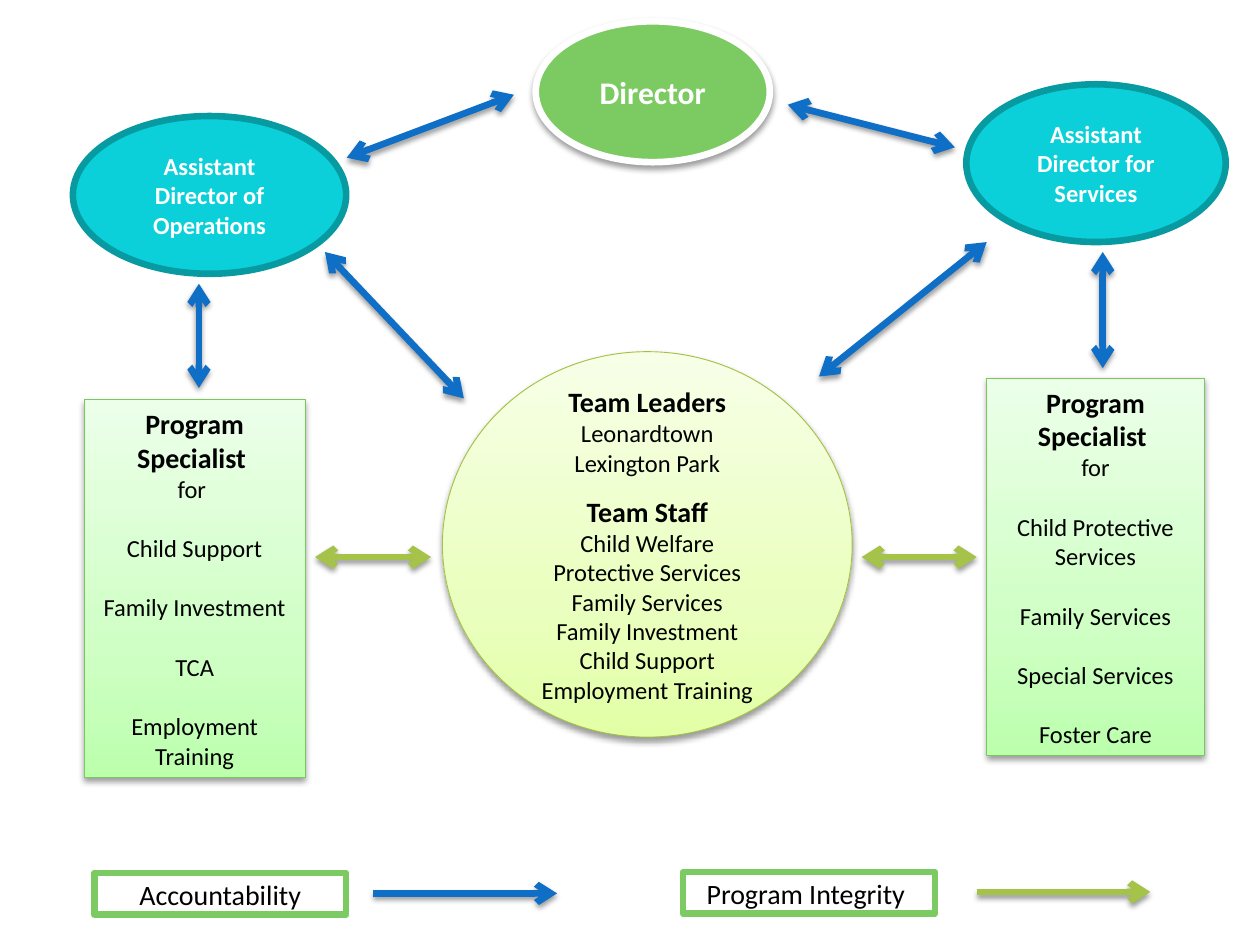
"""Build a one-slide organisation chart with accountability and integrity arrows."""
from dataclasses import dataclass

from lxml.etree import SubElement
from pptx import Presentation
from pptx.dml.color import RGBColor
from pptx.enum.shapes import MSO_CONNECTOR, MSO_SHAPE
from pptx.enum.text import MSO_ANCHOR, PP_ALIGN
from pptx.oxml.ns import qn
from pptx.shapes.base import BaseShape
from pptx.shapes.shapetree import SlideShapes
from pptx.util import Cm, Pt

BLUE, OLIVE, GREEN, CYAN, WHITE, BLACK = "0F6FC6", "A5C249", "7CCA62", "0BD0D9", "FFFFFF", "000000"
LIME_FADE = ("E2FFA5", "EAFFBF", "F7FFE7")
MINT_FADE = ("BCFFAD", "CFFFC5", "ECFFE9")
FADE_STOPS = (0, 35, 100)
GAP = 17.1
FRAME_FORMAT = {"word_wrap": True, "vertical_anchor": MSO_ANCHOR.MIDDLE}


@dataclass(frozen=True)
class Line:
    text: str
    size: float = 14
    bold: bool = False
    before: float = 0


@dataclass(frozen=True)
class Node:
    box: tuple[float, float, float, float]
    fill: str | tuple[str, ...]
    border: str
    border_width: float
    lines: tuple[Line, ...]
    outline: MSO_SHAPE = MSO_SHAPE.OVAL
    ink: str = BLACK
    shadow: bool = False


@dataclass(frozen=True)
class Arrow:
    ends: tuple[float, float, float, float]
    color: str
    two_way: bool = True


def rgb(code: str) -> RGBColor:
    return RGBColor.from_string(code)


def add_shadow(shape: BaseShape, blur: float) -> None:
    properties = shape.element.spPr
    effects = properties.find(qn("a:effectLst"))
    if effects is None:
        effects = SubElement(properties, qn("a:effectLst"))
    outer = SubElement(effects, qn("a:outerShdw"), blurRad=str(Pt(blur)), dist=str(Pt(2)),
                       dir="5400000", rotWithShape="0")
    ink = SubElement(outer, qn("a:srgbClr"), val=BLACK)
    SubElement(ink, qn("a:alpha"), val="38000")


def fade(shape: BaseShape, colors: tuple[str, ...]) -> None:
    properties = shape.element.spPr
    gradient = SubElement(properties, qn("a:gradFill"), rotWithShape="1")
    stops = SubElement(gradient, qn("a:gsLst"))
    for position, color in zip(FADE_STOPS, colors):
        stop = SubElement(stops, qn("a:gs"), pos=str(position * 1000))
        SubElement(stop, qn("a:srgbClr"), val=color)
    SubElement(gradient, qn("a:lin"), ang="16200000", scaled="0")
    properties.find(qn("a:prstGeom")).addnext(gradient)


def draw_node(shapes: SlideShapes, node: Node) -> None:
    shape = shapes.add_shape(node.outline, *map(Cm, node.box))
    shape.shadow.inherit = False
    if isinstance(node.fill, str):
        shape.fill.solid()
        shape.fill.fore_color.rgb = rgb(node.fill)
    else:
        fade(shape, node.fill)
    shape.line.color.rgb = rgb(node.border)
    shape.line.width = Pt(node.border_width)
    if node.shadow:
        add_shadow(shape, 3.5)
    frame = shape.text_frame
    for key, value in FRAME_FORMAT.items():
        setattr(frame, key, value)
    for index, line in enumerate(node.lines):
        paragraph = frame.add_paragraph() if index else frame.paragraphs[0]
        paragraph.alignment = PP_ALIGN.CENTER
        paragraph.space_before = Pt(line.before)
        run = paragraph.add_run()
        run.text = line.text
        for key, value in {"name": "Calibri", "size": Pt(line.size), "bold": line.bold}.items():
            setattr(run.font, key, value)
        run.font.color.rgb = rgb(node.ink)


def draw_arrow(shapes: SlideShapes, arrow: Arrow) -> None:
    connector = shapes.add_connector(MSO_CONNECTOR.STRAIGHT, *map(Cm, arrow.ends))
    connector.line.color.rgb = rgb(arrow.color)
    connector.line.width = Pt(3.8)
    stroke = connector.element.spPr.find(qn("a:ln"))
    for end in ("a:headEnd", "a:tailEnd") if arrow.two_way else ("a:tailEnd",):
        SubElement(stroke, qn(end), type="arrow")
    add_shadow(connector, 3.1)


def team(box: tuple[float, float, float, float]) -> Node:
    places = ("Leonardtown", "Lexington Park")
    staff = ("Child Welfare", "Protective Services", "Family Services",
             "Family Investment", "Child Support", "Employment Training")
    lines = (Line("Team Leaders", 16, True), *map(Line, places),
             Line("Team Staff", 16, True, 9.8), *map(Line, staff))
    return Node(box, LIME_FADE, "A3C144", 0.5, lines, shadow=True)


def specialist(box: tuple[float, float, float, float], link: str, *programs: str) -> Node:
    lines = (Line("Program Specialist ", 16, True), Line(link),
             *(Line(program, before=GAP) for program in programs))
    return Node(box, MINT_FADE, "78C85D", 0.5, lines, MSO_SHAPE.RECTANGLE, shadow=True)


def assistant(box: tuple[float, float, float, float], title: str) -> Node:
    return Node(box, CYAN, "089AA1", 3.78, (Line(title, bold=True),), ink=WHITE)


def legend(left: float, top: float, label: str) -> Node:
    return Node((left, top, 5.08, 0.84), WHITE, GREEN, 3.78, (Line(label, 16),), MSO_SHAPE.RECTANGLE)


NODES = (
    team((8.92, 7.09, 8.26, 7.77)),
    specialist((1.7, 8.05, 4.45, 7.62), "for ", "Child Support", "Family Investment",
               "TCA", "Employment Training"),
    specialist((19.89, 7.62, 4.39, 7.62), "for", "Child Protective Services", "Family Services",
               "Special Services", "Foster Care"),
    assistant((1.47, 2.34, 5.51, 3.18), "Assistant Director of Operations"),
    assistant((19.48, 1.7, 5.23, 3.18), "Assistant Director for Services"),
    Node((10.8, 0.43, 4.72, 2.84), GREEN, WHITE, 3.82, (Line("Director", 18, True),),
         ink=WHITE, shadow=True),
    legend(13.77, 17.58, "Program Integrity "),
    legend(1.9, 17.6, "Accountability"),
)
ARROWS = (
    Arrow((7.52, 18.01, 11.23, 18.01), BLUE, False),
    Arrow((19.69, 17.98, 23.19, 17.98), OLIVE, False),
    Arrow((6.35, 11.23, 8.69, 11.23), OLIVE),
    Arrow((17.37, 11.23, 19.69, 11.23), OLIVE),
    Arrow((4.01, 5.72, 4.01, 7.82), BLUE),
    Arrow((22.23, 5.08, 22.23, 7.42), BLUE),
    Arrow((10.36, 1.91, 6.99, 3.18), BLUE),
    Arrow((15.88, 2.11, 19.25, 2.97), BLUE),
    Arrow((6.55, 5.08, 9.35, 8.03), BLUE),
    Arrow((19.89, 4.88, 16.51, 7.59), BLUE),
)


def main() -> None:
    deck = Presentation()
    deck.slide_width, deck.slide_height = Cm(25.4), Cm(19.05)
    shapes = deck.slides.add_slide(deck.slide_layouts[6]).shapes
    for node in NODES:
        draw_node(shapes, node)
    for arrow in ARROWS:
        draw_arrow(shapes, arrow)
    deck.save("out.pptx")


if __name__ == "__main__":
    main()
